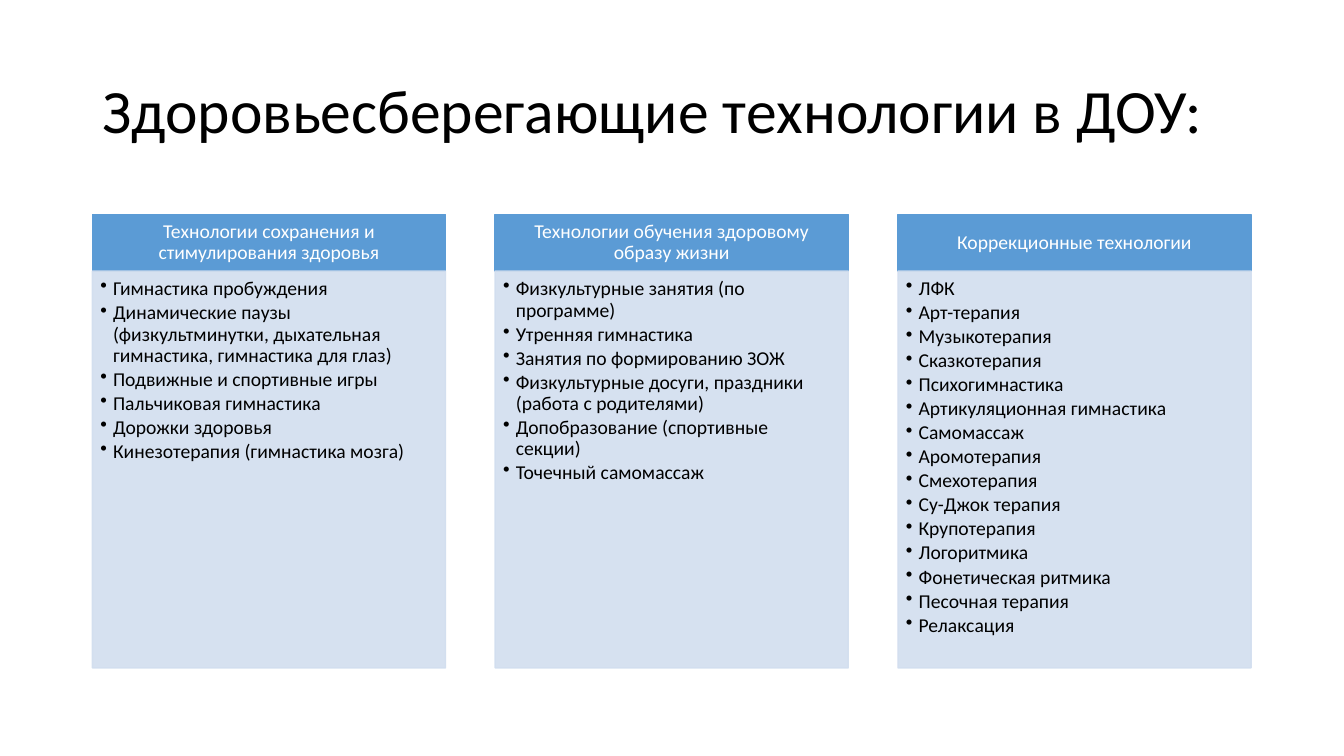
from dataclasses import dataclass

from lxml.etree import SubElement
from pptx import Presentation
from pptx.dml.color import RGBColor
from pptx.enum.shapes import MSO_SHAPE
from pptx.enum.text import MSO_ANCHOR, PP_ALIGN
from pptx.oxml.ns import qn
from pptx.util import Cm, Pt

TITLE = "Здоровьесберегающие технологии в ДОУ:"
TECHNOLOGIES = {
    "Технологии сохранения и стимулирования здоровья": [
        "Гимнастика пробуждения",
        "Динамические паузы (физкультминутки, дыхательная гимнастика, гимнастика для глаз)",
        "Подвижные и спортивные игры",
        "Пальчиковая гимнастика",
        "Дорожки здоровья",
        "Кинезотерапия (гимнастика мозга)",
    ],
    "Технологии обучения здоровому образу жизни": [
        "Физкультурные занятия (по программе)",
        "Утренняя гимнастика",
        "Занятия по формированию ЗОЖ",
        "Физкультурные досуги, праздники (работа с родителями)",
        "Допобразование (спортивные секции)",
        "Точечный самомассаж",
    ],
    "Коррекционные технологии": [
        "ЛФК",
        "Арт-терапия",
        "Музыкотерапия",
        "Сказкотерапия",
        "Психогимнастика",
        "Артикуляционная гимнастика",
        "Самомассаж",
        "Аромотерапия",
        "Смехотерапия",
        "Су-Джок терапия",
        "Крупотерапия",
        "Логоритмика",
        "Фонетическая ритмика",
        "Песочная терапия",
        "Релаксация",
    ],
}


@dataclass(frozen=True)
class Theme:
    font: str = "Calibri"
    title_size: int = 44
    text_size: int = 14
    text: RGBColor = RGBColor(0, 0, 0)
    header_text: RGBColor = RGBColor(255, 255, 255)
    header: RGBColor = RGBColor(0x5B, 0x9B, 0xD5)
    body: RGBColor = RGBColor(0xD2, 0xDE, 0xEF)
    body_opacity: int = 90


THEME = Theme()

LEFT, CONTENT_WIDTH = 2.33, 29.2
TITLE_TOP, TITLE_HEIGHT = 1.02, 3.68
COLUMN_WIDTH = 8.9
HEADER_TOP, HEADER_HEIGHT, BODY_HEIGHT = 5.41, 1.42, 10
COLUMN_STEP = (CONTENT_WIDTH - COLUMN_WIDTH) / (len(TECHNOLOGIES) - 1)
BULLET_INDENT = 0.32


def set_frame(frame, anchor, insets):
    """Wrap the text, anchor it, and set left, top, right and bottom insets."""
    frame.word_wrap = True
    frame.vertical_anchor = anchor
    (frame.margin_left, frame.margin_top,
     frame.margin_right, frame.margin_bottom) = map(Cm, insets)


def write(paragraph, text, size, color, align=PP_ALIGN.LEFT):
    paragraph.alignment = align
    paragraph.line_spacing = 0.9
    run = paragraph.add_run()
    run.text = text
    run.font.name = THEME.font
    run.font.size = Pt(size)
    run.font.color.rgb = color


def add_bullet(paragraph):
    properties = paragraph._p.get_or_add_pPr()
    properties.set("marL", str(Cm(BULLET_INDENT)))
    properties.set("indent", str(-Cm(BULLET_INDENT)))
    SubElement(properties, qn("a:buChar")).set("char", "•")


def add_panel(slide, left, top, height, color, opacity=100):
    panel = slide.shapes.add_shape(
        MSO_SHAPE.RECTANGLE, Cm(left), Cm(top), Cm(COLUMN_WIDTH), Cm(height))
    panel.shadow.inherit = False
    panel.fill.solid()
    panel.fill.fore_color.rgb = color
    panel.line.color.rgb = color
    panel.line.width = Pt(1)
    if opacity < 100:
        for tint in panel._element.spPr.iter(qn("a:srgbClr")):
            SubElement(tint, qn("a:alpha")).set("val", str(opacity * 1000))
    return panel


def add_column(slide, left, heading, items):
    header = add_panel(slide, left, HEADER_TOP, HEADER_HEIGHT, THEME.header)
    set_frame(header.text_frame, MSO_ANCHOR.MIDDLE, (0.28, 0.16, 0.28, 0.16))
    write(header.text_frame.paragraphs[0], heading, THEME.text_size,
          THEME.header_text, PP_ALIGN.CENTER)

    body = add_panel(slide, left, HEADER_TOP + HEADER_HEIGHT, BODY_HEIGHT,
                     THEME.body, THEME.body_opacity)
    frame = body.text_frame
    set_frame(frame, MSO_ANCHOR.TOP, (0.2, 0.2, 0.28, 0.3))
    for index, item in enumerate(items):
        paragraph = frame.add_paragraph() if index else frame.paragraphs[0]
        add_bullet(paragraph)
        paragraph.space_after = Pt(2)
        write(paragraph, item, THEME.text_size, THEME.text)


def main():
    deck = Presentation()
    deck.slide_width, deck.slide_height = Cm(33.87), Cm(19.05)
    slide = deck.slides.add_slide(deck.slide_layouts[6])

    title = slide.shapes.add_textbox(
        Cm(LEFT), Cm(TITLE_TOP), Cm(CONTENT_WIDTH), Cm(TITLE_HEIGHT))
    set_frame(title.text_frame, MSO_ANCHOR.MIDDLE, (0.25, 0.13, 0.25, 0.13))
    write(title.text_frame.paragraphs[0], TITLE, THEME.title_size, THEME.text)

    for column, (heading, items) in enumerate(TECHNOLOGIES.items()):
        add_column(slide, LEFT + column * COLUMN_STEP, heading, items)

    deck.save("out.pptx")


if __name__ == "__main__":
    main()
